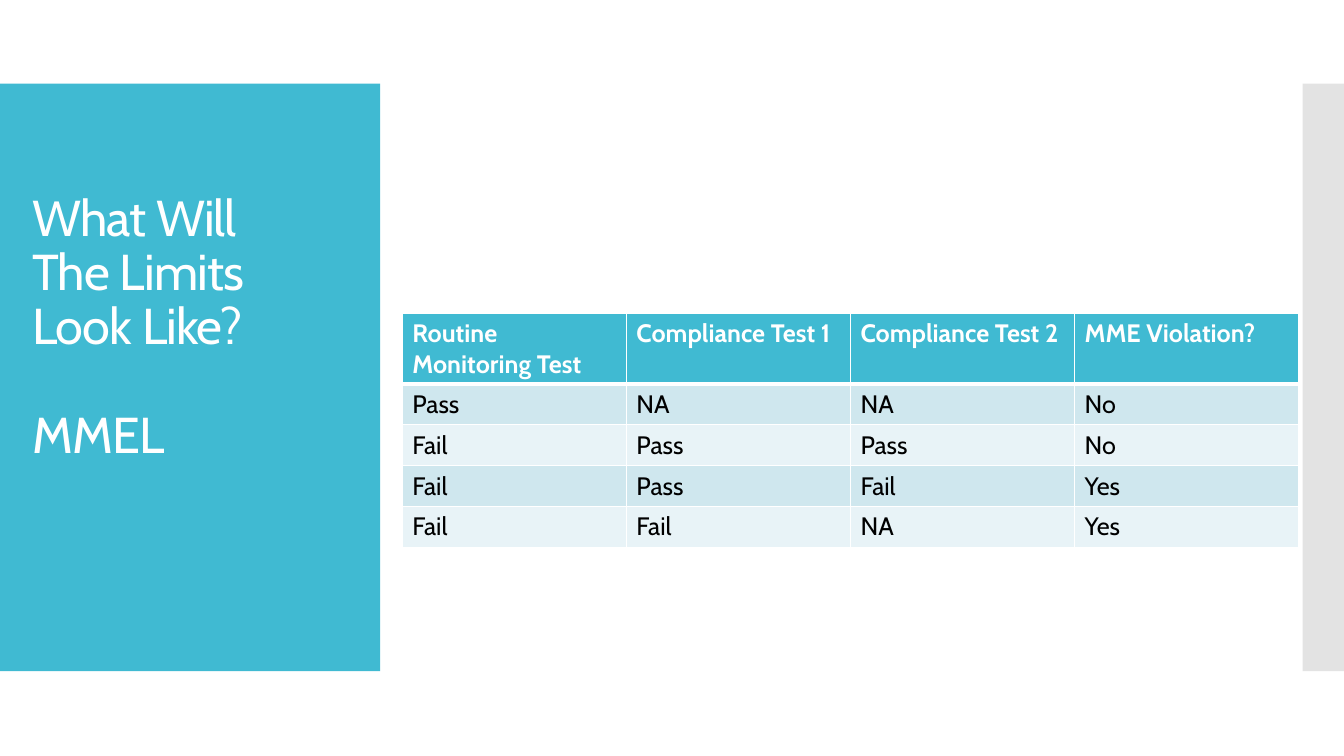
"""Build the slide on MMEL limits: a title panel beside a table of test outcomes."""
import pptx
import pptx.dml.color
import pptx.enum.shapes
import pptx.enum.text
import pptx.oxml.ns
import pptx.util
from dataclasses import dataclass
from lxml import etree
from pptx.util import Inches


@dataclass(frozen=True)
class Theme:
    font: str = "Cabin"
    accent: str = "40BAD2"
    side: str = "C8C8C8"
    white: str = "FFFFFF"
    black: str = "000000"
    bands: tuple = ("CFE7EE", "E8F3F7")
    title_size: int = 36
    table_size: int = 18


def set_font(paragraph, size, color, bold=False):
    paragraph.font.name = theme.font
    paragraph.font.size = pptx.util.Pt(size)
    paragraph.font.bold = bold
    paragraph.font.color.rgb = pptx.dml.color.RGBColor.from_string(color)


def add_child(parent, tag, **attributes):
    return etree.SubElement(parent, pptx.oxml.ns.qn(tag), **attributes)


theme = Theme()
presentation = pptx.Presentation()
presentation.slide_width = Inches(13.33)
presentation.slide_height = Inches(7.5)
slide = presentation.slides.add_slide(presentation.slide_layouts[6])

for left, width, color in ((0, 3.77, theme.accent), (12.92, 0.41, theme.side)):
    panel = slide.shapes.add_shape(
        pptx.enum.shapes.MSO_SHAPE.RECTANGLE,
        Inches(left), Inches(0.83), Inches(width), Inches(5.83))
    panel.shadow.inherit = False
    panel.line.fill.background()
    panel.fill.solid()
    panel.fill.fore_color.rgb = pptx.dml.color.RGBColor.from_string(color)
    if color == theme.side:
        fill_color = panel.fill._xPr.find(".//" + pptx.oxml.ns.qn("a:srgbClr"))
        add_child(fill_color, "a:alpha", val="50000")

title = slide.shapes.add_textbox(Inches(0.22), Inches(1.54), Inches(3.04), Inches(3.44))
title.text_frame.word_wrap = True
title.text_frame.vertical_anchor = pptx.enum.text.MSO_ANCHOR.MIDDLE
paragraph = title.text_frame.paragraphs[0]
paragraph.text = "What Will The Limits Look Like?\v\vMMEL"
paragraph.line_spacing = 0.9
set_font(paragraph, theme.title_size, theme.white)
for run in paragraph.runs:
    run._r.get_or_add_rPr().set("spc", "-60")

rows = (
    ("Routine Monitoring Test", "Compliance Test 1", "Compliance Test 2", "MME Violation?"),
    ("Pass", "NA", "NA", "No"),
    ("Fail", "Pass", "Pass", "No"),
    ("Fail", "Pass", "Fail", "Yes"),
    ("Fail", "Fail", "NA", "Yes"),
)
table = slide.shapes.add_table(
    len(rows), len(rows[0]), Inches(3.99), Inches(3.11), Inches(8.89), Inches(2.32)).table
for column in table.columns:
    column.width = Inches(8.89 / len(rows[0]))

for row_index, row in enumerate(rows):
    is_header = row_index == 0
    table.rows[row_index].height = Inches(0.7 if is_header else 0.405)
    fill = theme.accent if is_header else theme.bands[(row_index - 1) % 2]
    for column_index, text in enumerate(row):
        cell = table.cell(row_index, column_index)
        cell.text = text
        set_font(cell.text_frame.paragraphs[0], theme.table_size,
                 theme.white if is_header else theme.black, is_header)
        properties = cell._tc.get_or_add_tcPr()
        for side in "LRTB":
            thick = (row_index, side) in ((0, "B"), (1, "T"))
            border = add_child(properties, "a:ln" + side,
                               w=str(pptx.util.Pt(3 if thick else 1)))
            add_child(add_child(border, "a:solidFill"), "a:srgbClr", val=theme.white)
        cell.fill.solid()
        cell.fill.fore_color.rgb = pptx.dml.color.RGBColor.from_string(fill)

presentation.save("out.pptx")
